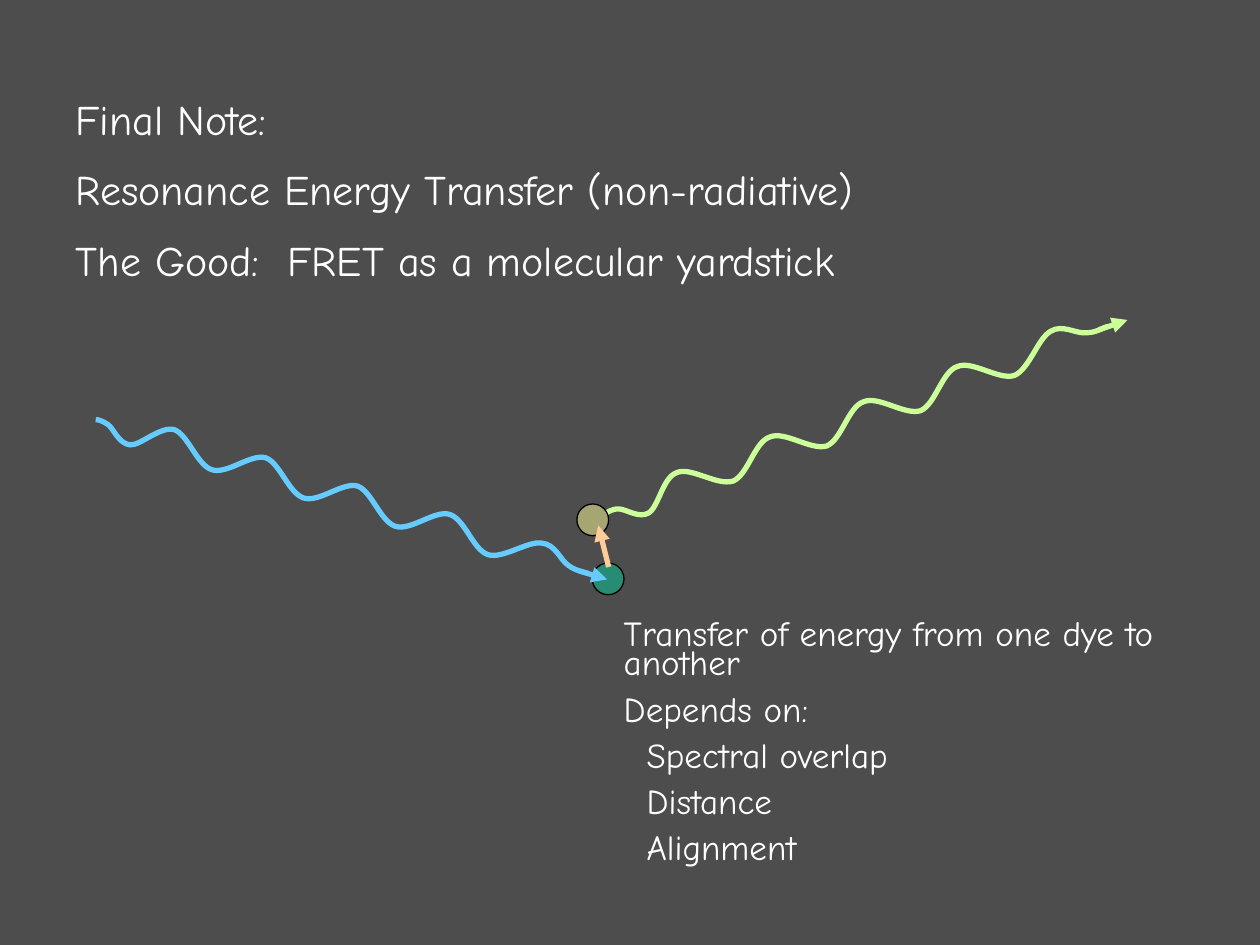
from pptx import Presentation
from pptx import util as u
from pptx.dml.color import RGBColor
from pptx.enum import shapes, text
from pptx.oxml.ns import qn
from lxml import etree

FONT = "Comic Neue"
GREY = RGBColor(0x4D, 0x4D, 0x4D)
WHITE = RGBColor(0xFF, 0xFF, 0xFF)
BLACK = RGBColor(0x00, 0x00, 0x00)
TEAL = RGBColor(0x00, 0xCC, 0x99)
YELLOW = RGBColor(0xFF, 0xFF, 0x99)
BLUE = RGBColor(0x66, 0xCC, 0xFF)
GREEN = RGBColor(0xCC, 0xFF, 0x99)
ORANGE = RGBColor(0xFF, 0xCC, 0x99)

# Wave points in cm within the diagram: a start, then three points per curve.
BLUE_HEAD = [(0.03, 2.06), (0.08, 2.06), (0.16, 2.08), (0.28, 2.16),
             (0.39, 2.24), (0.49, 2.54), (0.72, 2.57),
             (0.92, 2.59), (1.33, 2.19), (1.61, 2.26)]
BLUE_PERIOD = [(0.28, 0.10), (0.46, 0.71), (0.76, 0.81),
               (1.07, 0.91), (1.55, 0.48), (1.85, 0.57)]
BLUE_TAIL = [(7.47, 4.06), (7.63, 4.67), (7.93, 4.78),
             (8.23, 4.88), (8.74, 4.50), (9.02, 4.55),
             (9.30, 4.57), (9.40, 4.90), (9.56, 5.00),
             (9.71, 5.11), (9.86, 5.13), (9.96, 5.16)]
GREEN_HEAD = [(10.32, 3.94), (10.34, 3.94), (10.42, 3.86), (10.57, 3.86),
              (10.72, 3.86), (10.98, 4.06), (11.18, 3.94),
              (11.38, 3.81), (11.46, 3.23), (11.74, 3.13),
              (12.02, 3.00), (12.55, 3.40), (12.88, 3.30)]
GREEN_PERIOD = [(0.30, -0.13), (0.43, -0.79), (0.74, -0.89),
                (1.04, -1.02), (1.57, -0.61), (1.89, -0.71)]
GREEN_TAIL = [(18.85, 1.04), (19.03, 0.41), (19.28, 0.28),
              (19.51, 0.13), (19.79, 0.33), (19.99, 0.31),
              (20.20, 0.31), (20.35, 0.20), (20.43, 0.18)]


def wave_points(head, period, tail, count=3):
    points = list(head)
    for _ in range(count):
        left, top = points[-1]
        points += [(left + x, top + y) for x, y in period]
    return points + tail


def add_wave(page, box, points, colour):
    """Draw a freeform whose points are joined by cubic curves."""
    places = [(u.Cm(box[0] + x), u.Cm(box[1] + y)) for x, y in points]
    builder = page.shapes.build_freeform(*places[0])
    builder.add_line_segments(places[1:], close=False)
    wave = builder.convert_to_shape()
    wave.shadow.inherit = False
    wave.fill.background()
    wave.line.color.rgb = colour
    wave.line.width = u.Pt(3)
    segments = list(wave.element.iter(qn("a:lnTo")))
    outline = segments[0].getparent()
    for first in range(0, len(segments), 3):
        curve = etree.SubElement(outline, qn("a:cubicBezTo"))
        for segment in segments[first:first + 3]:
            curve.append(segment[0])
            outline.remove(segment)


def add_arrow(page, box, start, end, colour):
    arrow = page.shapes.add_connector(
        shapes.MSO_CONNECTOR.STRAIGHT,
        u.Cm(box[0] + start[0]), u.Cm(box[1] + start[1]),
        u.Cm(box[0] + end[0]), u.Cm(box[1] + end[1]))
    arrow.line.color.rgb = colour
    arrow.line.width = u.Pt(3)
    etree.SubElement(arrow.line._get_or_add_ln(), qn("a:tailEnd"), type="triangle")
    etree.SubElement(arrow.element.spPr, qn("a:effectLst"))


def add_dye(page, box, left, top, colour):
    """Draw a half-transparent dye molecule."""
    dye = page.shapes.add_shape(
        shapes.MSO_SHAPE.OVAL, u.Cm(box[0] + left), u.Cm(box[1] + top),
        u.Cm(0.64), u.Cm(0.64))
    dye.shadow.inherit = False
    dye.fill.solid()
    dye.fill.fore_color.rgb = colour
    shade = dye.element.spPr.find(qn("a:solidFill"))[0]
    etree.SubElement(shade, qn("a:alpha"), val="50000")
    dye.line.color.rgb = BLACK
    dye.line.width = u.Pt(0.75)


def add_diagram(page, box):
    add_dye(page, box, 10.04, 4.95, TEAL)
    add_wave(page, box, wave_points(BLUE_HEAD, BLUE_PERIOD, BLUE_TAIL), BLUE)
    add_arrow(page, box, (9.78, 5.11), (10.34, 5.28), BLUE)
    add_wave(page, box, wave_points(GREEN_HEAD, GREEN_PERIOD, GREEN_TAIL), GREEN)
    add_arrow(page, box, (20.25, 0.25), (20.83, 0.05), GREEN)
    add_dye(page, box, 9.73, 3.76, YELLOW)
    add_arrow(page, box, (10.37, 5.03), (10.16, 4.19), ORANGE)


def fill_text(holder, box, lines, size, before, spacing=1.0):
    """Place a placeholder and fill it with (words, indent in cm) lines."""
    holder.left, holder.top, holder.width, holder.height = map(u.Cm, box)
    frame = holder.text_frame
    frame.word_wrap = True
    frame.auto_size = text.MSO_AUTO_SIZE.NONE
    frame.vertical_anchor = text.MSO_ANCHOR.MIDDLE
    for number, (words, indent) in enumerate(lines):
        para = frame.paragraphs[0] if number == 0 else frame.add_paragraph()
        para.alignment = text.PP_ALIGN.LEFT
        para.line_spacing = spacing
        para.space_before = u.Pt(before)
        properties = para._p.get_or_add_pPr()
        properties.set("marL", str(u.Cm(indent)))
        properties.set("indent", "0")
        etree.SubElement(properties, qn("a:buNone"))
        span = para.add_run()
        span.text = words
        span.font.name = FONT
        span.font.size = u.Pt(size)
        span.font.color.rgb = WHITE


def add_heading(page, box):
    lines = ["Final Note:",
             "Resonance Energy Transfer (non-radiative)",
             "The Good:  FRET as a molecular yardstick"]
    fill_text(page.shapes.title, box, [(line, 0) for line in lines], 24, 11.3)


def add_explanation(page, box):
    lines = [("Transfer of energy from one dye to another", 0),
             ("Depends on:", 0),
             ("Spectral overlap", 0.46),
             ("Distance", 0.46),
             ("Alignment", 0.46)]
    fill_text(page.placeholders[1], box, lines, 20, 9.6, 0.7)


def main():
    deck = Presentation()
    deck.slide_width, deck.slide_height = u.Cm(25.4), u.Cm(19.05)
    page = deck.slides.add_slide(deck.slide_layouts[1])
    page.background.fill.solid()
    page.background.fill.fore_color.rgb = GREY
    add_heading(page, (1.27, 1.32, 20.96, 4.98))
    add_diagram(page, (1.9, 6.4))
    add_explanation(page, (12.32, 11.84, 12.04, 6.35))
    deck.save("out.pptx")


if __name__ == "__main__":
    main()
